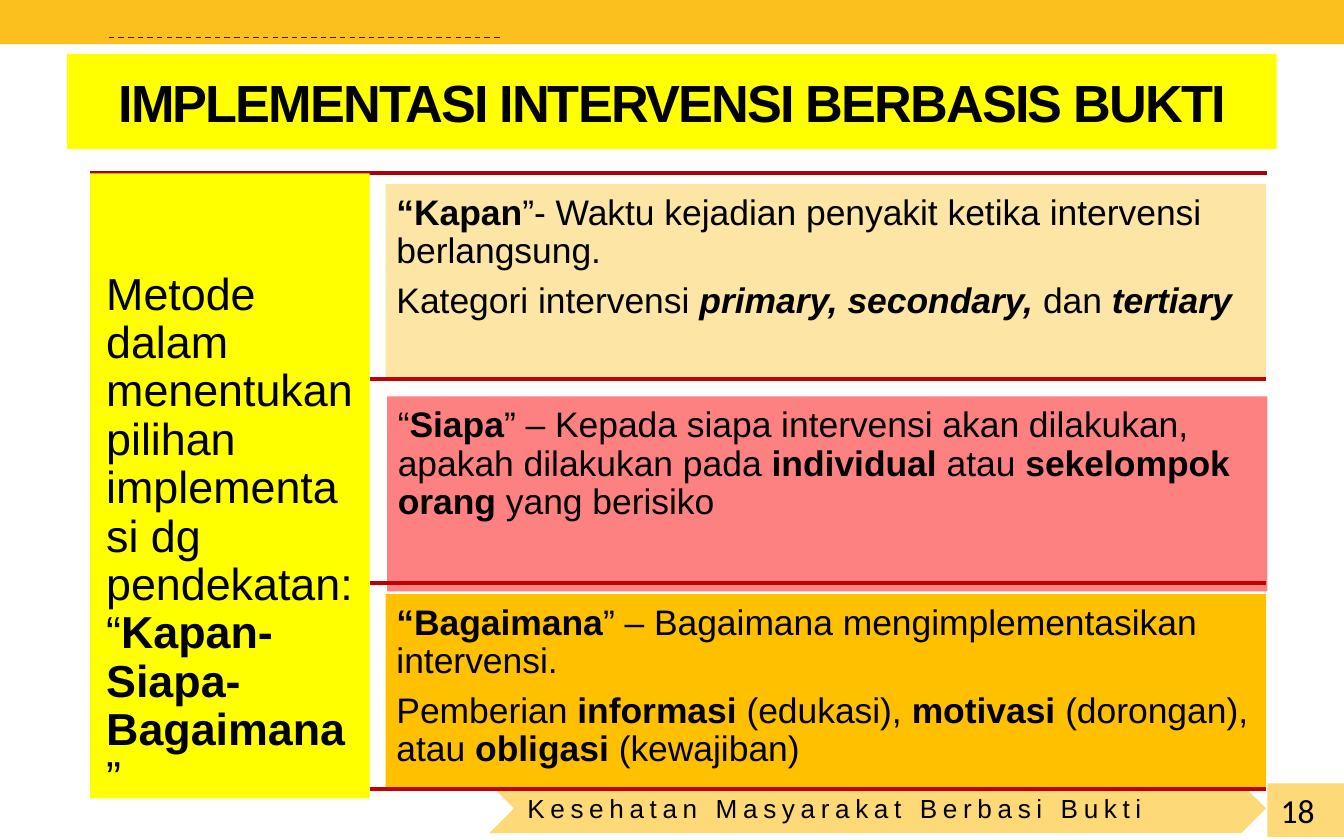
from typing import NamedTuple

from pptx import Presentation
from pptx.dml.color import RGBColor
from pptx.enum.dml import MSO_LINE
from pptx.enum.shapes import MSO_CONNECTOR, MSO_SHAPE
from pptx.enum.text import MSO_ANCHOR, PP_ALIGN
from pptx.oxml import parse_xml
from pptx.oxml.ns import nsdecls
from pptx.util import Pt

PX = 9144
RED = "BE0204"
YELLOW = "FFFF00"
PALE = "FDD978"


class Run(NamedTuple):
    text: str
    bold: bool = False
    italic: bool = False


class Style(NamedTuple):
    size: int
    font: str = "Arial"
    align: PP_ALIGN = PP_ALIGN.LEFT
    anchor: MSO_ANCHOR = MSO_ANCHOR.TOP
    inset: tuple[int, int, int, int] = (10, 5, 10, 5)
    track: int = 0
    lead: float = 1.0
    after: int = 0


class Box(NamedTuple):
    x: int
    y: int
    w: int
    h: int
    fill: str
    paras: tuple[tuple[Run, ...], ...] = ()
    style: Style = Style(18)
    kind: MSO_SHAPE = MSO_SHAPE.RECTANGLE


class Rule(NamedTuple):
    x: int
    end: int
    y: int
    color: str = RED
    width: float = 2.08
    dash: bool = False


def rgb(code: str) -> RGBColor:
    return RGBColor.from_string(code)


def write(frame, paras: tuple[tuple[Run, ...], ...], style: Style) -> None:
    frame.word_wrap = True
    frame.vertical_anchor = style.anchor
    left, top, right, base = (side * PX for side in style.inset)
    frame.margin_left, frame.margin_top = left, top
    frame.margin_right, frame.margin_bottom = right, base
    for index, runs in enumerate(paras):
        para = frame.add_paragraph() if index else frame.paragraphs[0]
        para.alignment = style.align
        para.line_spacing = style.lead
        para.space_after = Pt(style.after)
        for item in runs:
            run = para.add_run()
            run.text = item.text
            font = run.font
            font.name, font.size = style.font, Pt(style.size)
            font.bold, font.italic = item.bold, item.italic
            font.color.rgb = rgb("000000")
            if style.track:
                run._r.get_or_add_rPr().set("spc", str(style.track))


def draw_box(slide, box: Box) -> None:
    shape = slide.shapes.add_shape(
        box.kind, box.x * PX, box.y * PX, box.w * PX, box.h * PX)
    shape.shadow.inherit = False
    shape.fill.solid()
    shape.fill.fore_color.rgb = rgb(box.fill)
    shape.line.fill.background()
    if box.paras:
        write(shape.text_frame, box.paras, box.style)


def draw_rule(slide, rule: Rule) -> None:
    line = slide.shapes.add_connector(
        MSO_CONNECTOR.STRAIGHT,
        rule.x * PX, rule.y * PX, rule.end * PX, rule.y * PX)
    line.line.color.rgb = rgb(rule.color)
    line.line.width = Pt(rule.width)
    if rule.dash:
        line.line.dash_style = MSO_LINE.DASH
    line._element.spPr.append(parse_xml(f"<a:effectLst {nsdecls('a')}/>"))


TITLE = Style(28, align=PP_ALIGN.CENTER, anchor=MSO_ANCHOR.MIDDLE, track=-100)
FOOT = Style(14, align=PP_ALIGN.JUSTIFY, anchor=MSO_ANCHOR.MIDDLE, track=300)
SIDE = Style(24, inset=(12, 73, 12, 12), lead=0.9)
BODY = Style(19, inset=(8, 8, 8, 8), lead=0.9, after=6)

WHEN = (
    (Run("“Kapan", True),
     Run("”- Waktu kejadian penyakit ketika intervensi berlangsung.")),
    (Run("Kategori intervensi "), Run("primary, secondary, ", True, True),
     Run("dan "), Run("tertiary", True, True)),
)
WHO = (
    (Run("“"), Run("Siapa", True),
     Run("” – Kepada siapa intervensi akan dilakukan, "
         "apakah dilakukan pada "),
     Run("individual ", True), Run("atau "),
     Run("sekelompok orang ", True), Run("yang berisiko")),
)
HOW = (
    (Run("“Bagaimana", True),
     Run("” – Bagaimana mengimplementasikan intervensi.")),
    (Run("Pemberian "), Run("informasi ", True), Run("(edukasi), "),
     Run("motivasi ", True), Run("(dorongan), atau "),
     Run("obligasi ", True), Run("(kewajiban)")),
)
METHOD = (
    (Run("Metode dalam menentukan pilihan implementasi dg pendekatan: “"),
     Run("Kapan-Siapa-Bagaimana", True), Run("”")),
)

PARTS = (
    Box(0, 0, 1000, 33, "FBC01E"),
    Box(50, 40, 900, 71, YELLOW,
        ((Run("IMPLEMENTASI INTERVENSI BERBASIS BUKTI", True),),), TITLE),
    Box(943, 583, 57, 40, PALE, ((Run("18"),),), Style(18, "Calibri")),
    Box(364, 583, 578, 37, PALE,
        ((Run("Kesehatan Masyarakat Berbasi Bukti"),),), FOOT,
        MSO_SHAPE.CHEVRON),
    Rule(81, 373, 28, "5F0102", 0.75, True),
    Rule(67, 943, 129, "AC0204"),
    Box(67, 129, 208, 465, YELLOW, METHOD, SIDE),
    Box(287, 137, 655, 145, "FDE6A5", WHEN, BODY),
    Rule(275, 942, 282),
    Box(288, 295, 655, 145, "FE8182", WHO, BODY),
    Rule(275, 942, 434),
    Box(287, 442, 655, 145, "FFC000", HOW, BODY),
    Rule(275, 942, 587),
)


def main() -> None:
    deck = Presentation()
    deck.slide_width, deck.slide_height = 1000 * PX, 625 * PX
    slide = deck.slides.add_slide(deck.slide_layouts[6])
    for part in PARTS:
        if isinstance(part, Box):
            draw_box(slide, part)
        else:
            draw_rule(slide, part)
    deck.save("out.pptx")


if __name__ == "__main__":
    main()
